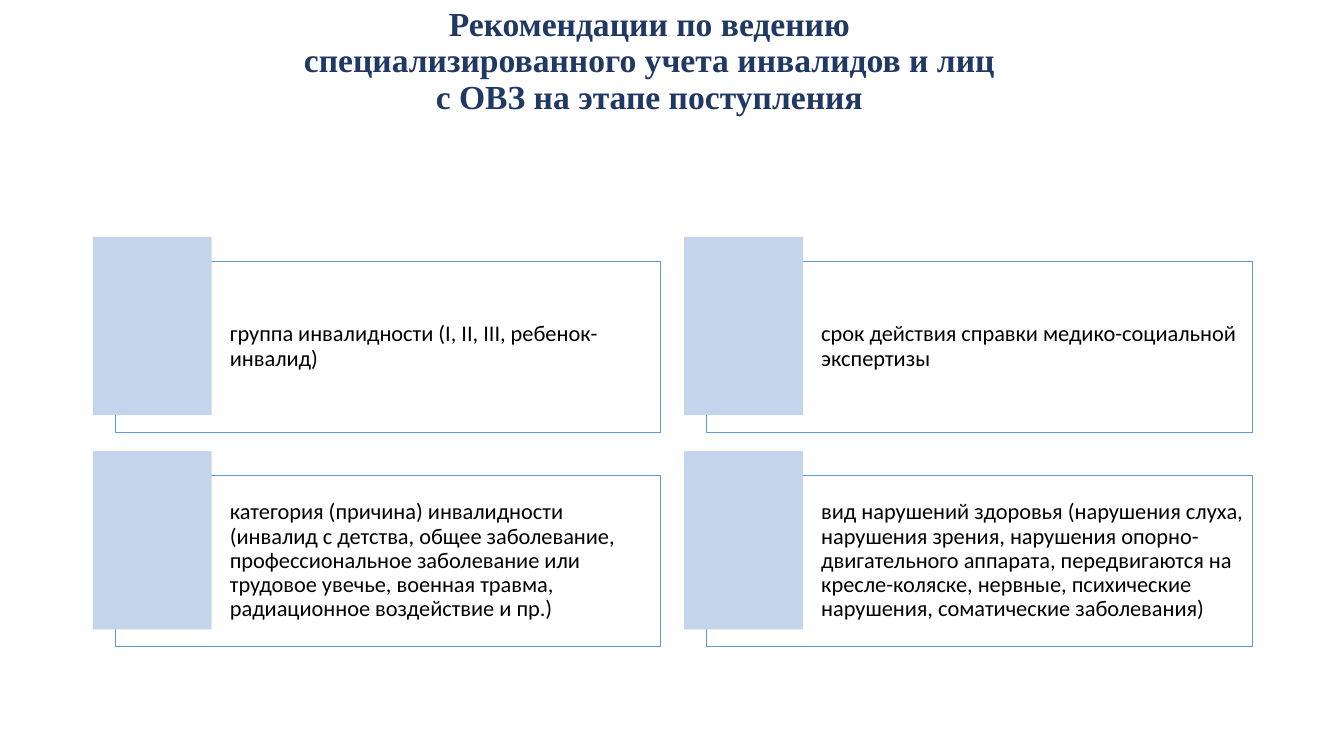
from pptx import Presentation
from pptx.dml.color import RGBColor
from pptx.enum.shapes import MSO_SHAPE
from pptx.enum.text import MSO_ANCHOR, PP_ALIGN
from pptx.util import Inches, Pt

RECTANGLE = MSO_SHAPE.RECTANGLE
MIDDLE = MSO_ANCHOR.MIDDLE
LEFT, CENTER = PP_ALIGN.LEFT, PP_ALIGN.CENTER

NAVY = RGBColor(0x20, 0x38, 0x64)
BLUE = RGBColor(0x5B, 0x9B, 0xD5)
PALE_BLUE = RGBColor(0xC4, 0xD5, 0xEB)
WHITE = RGBColor(0xFF, 0xFF, 0xFF)
BLACK = RGBColor(0x00, 0x00, 0x00)

TITLE = ("Рекомендации по ведению специализированного учета "
         "инвалидов и лиц с ОВЗ на этапе поступления")
RECORDS = [
    "группа инвалидности (I, II, III, ребенок-инвалид)",
    "срок действия справки медико-социальной экспертизы",
    "категория (причина) инвалидности (инвалид с детства, общее заболевание, "
    "профессиональное заболевание или трудовое увечье, военная травма, "
    "радиационное воздействие и пр.)",
    "вид нарушений здоровья (нарушения слуха, нарушения зрения, нарушения "
    "опорно-двигательного аппарата, передвигаются на кресле-коляске, нервные, "
    "психические нарушения, соматические заболевания)",
]
COLUMNS = 2


def write(frame, text, font, size, color, align, bold=False):
    frame.word_wrap = True
    frame.vertical_anchor = MIDDLE
    paragraph = frame.paragraphs[0]
    paragraph.alignment = align
    paragraph.line_spacing = 0.9
    run = paragraph.add_run()
    run.text = text
    run.font.name = font
    run.font.size = Pt(size)
    run.font.bold = bold
    run.font.color.rgb = color


def add_rectangle(slide, left, top, width, height, fill):
    rectangle = slide.shapes.add_shape(
        RECTANGLE, Inches(left), Inches(top), Inches(width), Inches(height))
    rectangle.shadow.inherit = False
    rectangle.fill.solid()
    rectangle.fill.fore_color.rgb = fill
    rectangle.line.fill.background()
    return rectangle


def add_title(slide, left, top, width, height):
    title = slide.shapes.add_textbox(
        Inches(left), Inches(top), Inches(width), Inches(height))
    write(title.text_frame, TITLE, "Times New Roman", 24, NAVY, CENTER, bold=True)


def add_record(slide, left, top, width, height, text):
    # Outlined card with its text
    inset_x, inset_y = 0.22, 0.245
    card = add_rectangle(slide, left + inset_x, top + inset_y,
                         width - inset_x, height - inset_y, WHITE)
    card.line.color.rgb = BLUE
    card.line.width = Pt(0.5)
    frame = card.text_frame
    frame.margin_left = Inches(1.14)
    frame.margin_right = frame.margin_top = frame.margin_bottom = Inches(0.07)
    write(frame, text, "Calibri", 16, BLACK, LEFT)

    # Block overlapping the card's corner
    add_rectangle(slide, left, top, 1.18, 1.77, PALE_BLUE)


def add_record_grid(slide, left, top, width, height):
    gap_x, gap_y = 0.23, 0.19
    rows = len(RECORDS) // COLUMNS
    cell_width = (width - gap_x * (COLUMNS - 1)) / COLUMNS
    cell_height = (height - gap_y * (rows - 1)) / rows
    for index, text in enumerate(RECORDS):
        row, column = divmod(index, COLUMNS)
        add_record(slide, left + column * (cell_width + gap_x),
                   top + row * (cell_height + gap_y),
                   cell_width, cell_height, text)


def main():
    presentation = Presentation()
    presentation.slide_width = Inches(13.33)
    presentation.slide_height = Inches(7.5)
    slide = presentation.slides.add_slide(presentation.slide_layouts[6])
    add_title(slide, 2.82, 0.2, 7.24, 0.83)
    add_record_grid(slide, 0.92, 2.35, 11.5, 4.06)
    presentation.save("out.pptx")


if __name__ == "__main__":
    main()
